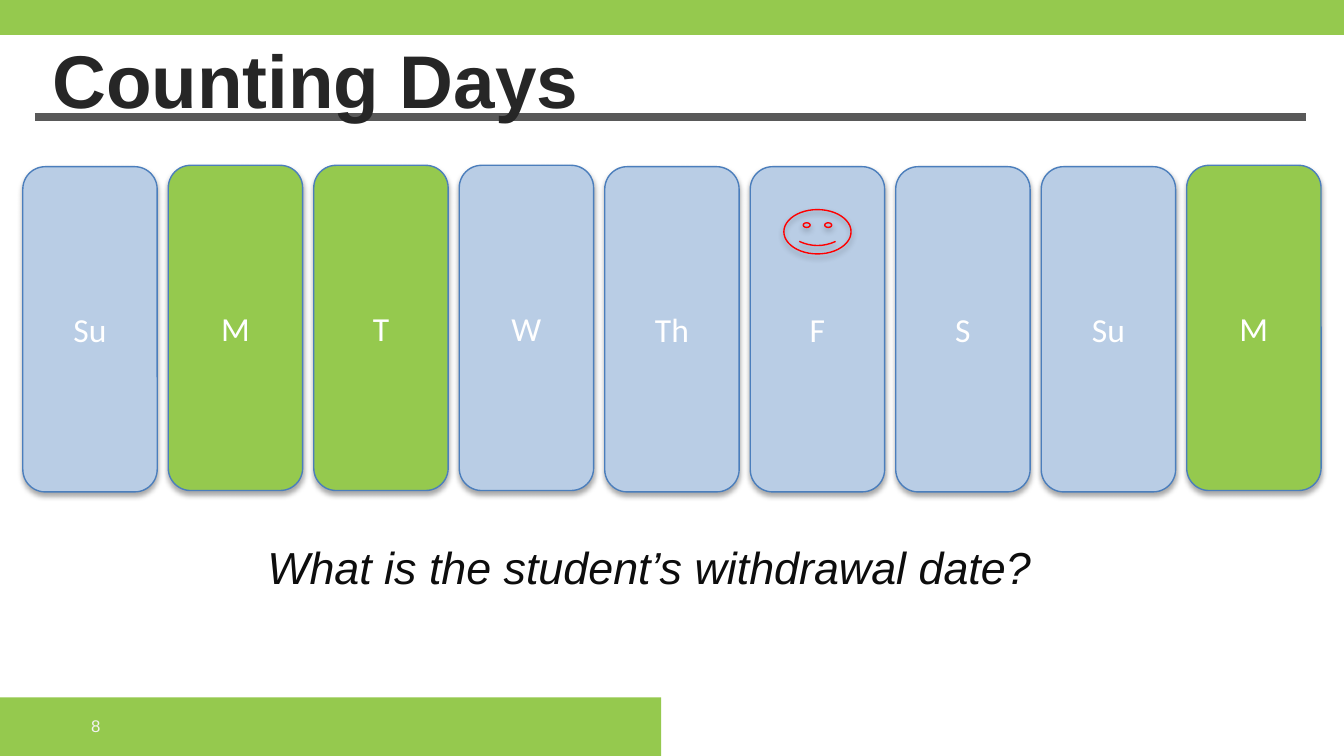
import pptx
import pptx.util
import pptx.dml.color
import pptx.enum.shapes
import pptx.enum.text
import pptx.oxml
import pptx.oxml.ns

Inches, Pt = pptx.util.Inches, pptx.util.Pt
RGB = pptx.dml.color.RGBColor.from_string
SHAPE = pptx.enum.shapes.MSO_SHAPE
ALIGN = pptx.enum.text.PP_ALIGN
ANCHOR = pptx.enum.text.MSO_ANCHOR

TITLE = "Counting Days"
QUESTION = "What is the student’s withdrawal date?"
PAGE = "8"
# Day, highlighted, top in inches
DAYS = [
    ("Su", False, 1.24), ("M", True, 1.23), ("T", True, 1.23),
    ("W", False, 1.23), ("Th", False, 1.24), ("F", False, 1.24),
    ("S", False, 1.24), ("Su", False, 1.24), ("M", True, 1.23),
]
SMILEY_DAY = 5

THEME = {
    "green": "95C94E", "blue": "B9CDE5", "outline": "4B7EBC", "rule": "595959",
    "red": "FF0000", "title": "262626", "question": "0D0D0D", "page": "F2F2F2",
    "white": "FFFFFF", "heading_font": "Arial", "day_font": "Calibri",
    "title_size": 40, "question_size": 24, "day_size": 18, "page_size": 9,
}

SLIDE_WIDTH = 10
SLIDE_HEIGHT = SLIDE_WIDTH * 9 / 16
FIRST_LEFT, LAST_LEFT, DAY_WIDTH, DAY_HEIGHT = 0.17, 8.83, 1, 2.42
DAY_STEP = (LAST_LEFT - FIRST_LEFT) / (len(DAYS) - 1)
SMILEY_WIDTH, SMILEY_HEIGHT, SMILEY_DROP = 0.5, 0.33, 0.32


def write(shape, text, *, size, color, font=THEME["heading_font"], bold=False,
          italic=False, align=ALIGN.LEFT, anchor=ANCHOR.TOP):
    frame = shape.text_frame
    frame.word_wrap = True
    frame.vertical_anchor = anchor
    paragraph = frame.paragraphs[0]
    paragraph.alignment = align
    run = paragraph.add_run()
    run.text = text
    run.font.name, run.font.size = font, Pt(size)
    run.font.bold, run.font.italic = bold, italic
    run.font.color.rgb = RGB(color)


def add_shadow(shape):
    """Give the shape a soft shadow falling straight down."""
    effects = shape._element.spPr.find(pptx.oxml.ns.qn("a:effectLst"))
    effects.append(pptx.oxml.parse_xml(
        f'<a:outerShdw {pptx.oxml.ns.nsdecls("a")} blurRad="{Pt(3.1)}" '
        f'dist="{Pt(1.8)}" dir="5400000" rotWithShape="0">'
        '<a:srgbClr val="000000"><a:alpha val="35000"/></a:srgbClr></a:outerShdw>'))


def add_shape(slide, kind, box, fill=None, line=None):
    shape = slide.shapes.add_shape(kind, *map(Inches, box))
    shape.shadow.inherit = False
    if fill:
        shape.fill.solid()
        shape.fill.fore_color.rgb = RGB(fill)
    else:
        shape.fill.background()
    if line:
        shape.line.color.rgb = RGB(line)
        shape.line.width = Pt(0.75)
    else:
        shape.line.fill.background()
    return shape


def add_textbox(slide, box):
    return slide.shapes.add_textbox(*map(Inches, box))


def add_frame(slide):
    """Draw the green bands and the rule under the title."""
    for band in [(0, 5.19, 4.92, 0.44), (-0.02, 0, 10.03, 0.26)]:
        add_shape(slide, SHAPE.RECTANGLE, band, fill=THEME["green"])
    rule = slide.shapes.add_connector(
        pptx.enum.shapes.MSO_CONNECTOR.STRAIGHT,
        Inches(0.26), Inches(0.87), Inches(9.72), Inches(0.87))
    rule.line.color.rgb = RGB(THEME["rule"])
    rule.line.width = Pt(4)
    rule._element.spPr.append(pptx.oxml.parse_xml(
        f'<a:effectLst {pptx.oxml.ns.nsdecls("a")}/>'))


def add_days(slide):
    for index, (day, highlighted, top) in enumerate(DAYS):
        left = FIRST_LEFT + index * DAY_STEP
        card = add_shape(slide, SHAPE.ROUNDED_RECTANGLE,
                         (left, top, DAY_WIDTH, DAY_HEIGHT),
                         fill=THEME["green" if highlighted else "blue"],
                         line=THEME["outline"])
        add_shadow(card)
        write(card, day, size=THEME["day_size"], color=THEME["white"],
              font=THEME["day_font"], align=ALIGN.CENTER, anchor=ANCHOR.MIDDLE)

    smiley_left = FIRST_LEFT + SMILEY_DAY * DAY_STEP + (DAY_WIDTH - SMILEY_WIDTH) / 2
    smiley = add_shape(slide, SHAPE.SMILEY_FACE,
                       (smiley_left, DAYS[SMILEY_DAY][2] + SMILEY_DROP,
                        SMILEY_WIDTH, SMILEY_HEIGHT), line=THEME["red"])
    add_shadow(smiley)


def main():
    deck = pptx.Presentation()
    deck.slide_width, deck.slide_height = Inches(SLIDE_WIDTH), Inches(SLIDE_HEIGHT)
    slide = deck.slides.add_slide(deck.slide_layouts[6])

    add_frame(slide)
    write(add_textbox(slide, (0.29, 0.2, 9.35, 0.53)), TITLE, bold=True,
          size=THEME["title_size"], color=THEME["title"])
    add_days(slide)
    write(add_textbox(slide, (0.58, 3.97, 8.5, 0.5)), QUESTION, italic=True,
          size=THEME["question_size"], color=THEME["question"],
          align=ALIGN.CENTER)
    write(add_textbox(slide, (0.58, 5.25, 2.33, 0.3)), PAGE,
          size=THEME["page_size"], color=THEME["page"], anchor=ANCHOR.MIDDLE)
    deck.save("out.pptx")


if __name__ == "__main__":
    main()
